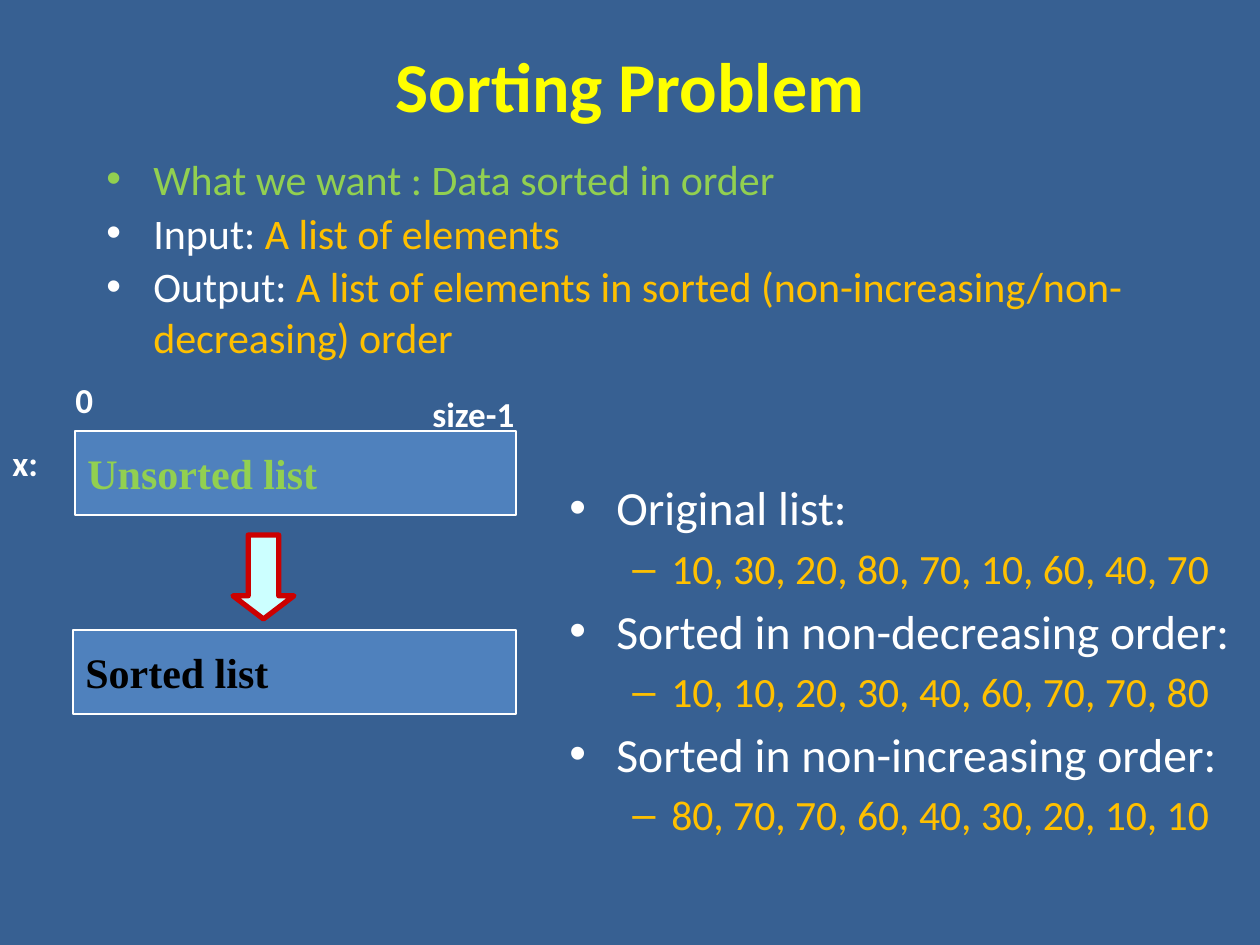
"""Build the Sorting Problem slide."""
from lxml import etree
from pptx import Presentation, util as u
from pptx.dml.color import RGBColor
from pptx.enum import shapes, text
from pptx.oxml.ns import qn

BACKGROUND = RGBColor(0x37, 0x60, 0x92)
YELLOW = RGBColor(0xFF, 0xFF, 0x00)
GREEN = RGBColor(0x92, 0xD0, 0x50)
GOLD = RGBColor(0xFF, 0xC0, 0x00)
WHITE = RGBColor(0xFF, 0xFF, 0xFF)
BLACK = RGBColor(0x00, 0x00, 0x00)
BLUE = RGBColor(0x4F, 0x81, 0xBD)
PALE_CYAN = RGBColor(0xCC, 0xFF, 0xFF)
RED = RGBColor(0xCC, 0x00, 0x00)

TITLE = "Sorting Problem"
PROBLEM = [
    [("What we want : Data sorted in order", GREEN)],
    [("Input: ", WHITE), ("A list of elements", GOLD)],
    [("Output: ", WHITE),
     ("A list of elements in sorted (non-increasing/non-decreasing) order", GOLD)],
]
EXAMPLES = [
    ("Original list:", "10, 30, 20, 80, 70, 10, 60, 40, 70"),
    ("Sorted in non-decreasing order:", "10, 10, 20, 30, 40, 60, 70, 70, 80"),
    ("Sorted in non-increasing order:", "80, 70, 70, 60, 40, 30, 20, 10, 10"),
]
LISTS = [
    ("Unsorted list", GREEN, (75, 431, 441, 84)),
    ("Sorted list", BLACK, (73, 630, 443, 84)),
]
LABELS = [
    ("x:", (0, 435, 52, 55)),
    ("0", (63, 372, 43, 55)),
    ("size-1", (420, 386, 113, 55)),
]
PROBLEM_AREA = (94, 147, 1071, 252)
EXAMPLES_AREA = (557, 472, 693, 410)
ARROW_AREA = (233, 535, 61, 84)

PROBLEM_STYLE = dict(bullet="•", margin=47, hang=47, size=24, before=2)
HEADING_STYLE = dict(bullet="•", margin=47, hang=47, size=27.2, before=5)
VALUES_STYLE = dict(bullet="–", margin=102, hang=39, size=23.8, before=4.2)


def px(length):
    return u.Emu(round(length * 914400 / 126))


def place(area):
    return [px(length) for length in area]


def add_run(paragraph, words, color, size, font="Calibri", bold=False):
    run = paragraph.add_run()
    run.text = words
    run.font.name = font
    run.font.size = u.Pt(size)
    run.font.bold = bold
    run.font.color.rgb = color


def add_bullets(slide, area, items):
    frame = slide.shapes.add_textbox(*place(area)).text_frame
    frame.word_wrap = True
    for index, (runs, style) in enumerate(items):
        paragraph = frame.paragraphs[0] if index == 0 else frame.add_paragraph()
        properties = paragraph._p.get_or_add_pPr()
        properties.set("marL", str(px(style["margin"])))
        properties.set("indent", str(-px(style["hang"])))
        etree.SubElement(properties, qn("a:buFont"), typeface="Arial")
        etree.SubElement(properties, qn("a:buChar"), char=style["bullet"])
        paragraph.space_before = u.Pt(style["before"] if index else 0)
        for words, color in runs:
            add_run(paragraph, words, color, style["size"])


def add_block(slide, kind, area, fill, line, width):
    block = slide.shapes.add_shape(kind, *place(area))
    block.shadow.inherit = False
    block.fill.solid()
    block.fill.fore_color.rgb = fill
    block.line.color.rgb = line
    block.line.width = u.Pt(width)
    return block


def main():
    deck = Presentation()
    deck.slide_width, deck.slide_height = px(1260), px(945)
    slide = deck.slides.add_slide(deck.slide_layouts[5])
    slide.background.fill.solid()
    slide.background.fill.fore_color.rgb = BACKGROUND

    title = slide.shapes.title
    title.left, title.top, title.width, title.height = place((63, 32, 1134, 104))
    title.text_frame.vertical_anchor = text.MSO_ANCHOR.MIDDLE
    heading = title.text_frame.paragraphs[0]
    heading.alignment = text.PP_ALIGN.CENTER
    add_run(heading, TITLE, YELLOW, 40, bold=True)

    add_bullets(slide, PROBLEM_AREA, [(runs, PROBLEM_STYLE) for runs in PROBLEM])

    for words, color, area in LISTS:
        block = add_block(slide, shapes.MSO_SHAPE.RECTANGLE, area, BLUE, WHITE, 0.75)
        frame = block.text_frame
        frame.vertical_anchor = text.MSO_ANCHOR.MIDDLE
        frame.paragraphs[0].alignment = text.PP_ALIGN.LEFT
        add_run(frame.paragraphs[0], words, color, 24, "Times New Roman", True)

    for words, area in LABELS:
        frame = slide.shapes.add_textbox(*place(area)).text_frame
        frame.word_wrap = False
        add_run(frame.paragraphs[0], words, WHITE, 20, bold=True)

    arrow = add_block(slide, shapes.MSO_SHAPE.DOWN_ARROW, ARROW_AREA, PALE_CYAN, RED, 3)
    arrow.adjustments[0] = 0.5
    arrow.adjustments[1] = 0.38

    examples = []
    for name, values in EXAMPLES:
        examples.append(([(name, WHITE)], HEADING_STYLE))
        examples.append(([(values, GOLD)], VALUES_STYLE))
    add_bullets(slide, EXAMPLES_AREA, examples)

    deck.save("out.pptx")


if __name__ == "__main__":
    main()
